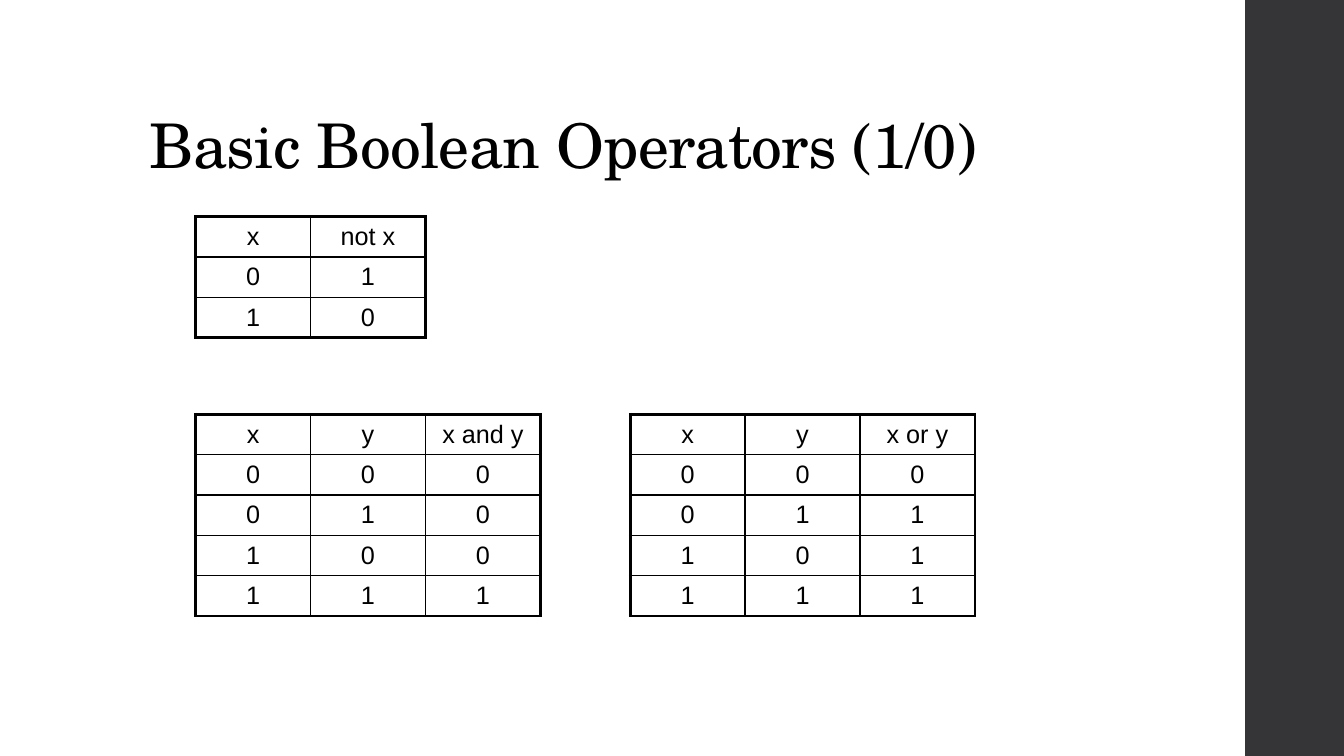
"""Build a slide of truth tables for the basic Boolean operators."""
from lxml import etree
from pptx import Presentation
from pptx.dml.color import RGBColor
from pptx.enum.shapes import MSO_SHAPE
from pptx.enum.text import MSO_ANCHOR, MSO_AUTO_SIZE, PP_ALIGN
from pptx.oxml.ns import qn
from pptx.util import Inches, Pt

RECTANGLE = MSO_SHAPE.RECTANGLE
MIDDLE, BOTTOM = MSO_ANCHOR.MIDDLE, MSO_ANCHOR.BOTTOM
LEFT, CENTER = PP_ALIGN.LEFT, PP_ALIGN.CENTER
NO_FIT = MSO_AUTO_SIZE.NONE

TITLE = "Basic Boolean Operators (1/0)"
NOT_TABLE = [("x", "not x"), (0, 1), (1, 0)]
AND_TABLE = [("x", "y", "x and y"), (0, 0, 0), (0, 1, 0), (1, 0, 0), (1, 1, 1)]
OR_TABLE = [("x", "y", "x or y"), (0, 0, 0), (0, 1, 1), (1, 0, 1), (1, 1, 1)]

WIDTH, HEIGHT = 13.33, 7.5
BAR_LEFT = 12.35
COLUMN, ROW = 1.14, 0.4
LEFT_EDGE, RIGHT_EDGE = 1.94, 6.25
UPPER_EDGE, LOWER_EDGE = 2.15, 4.11
TABLES = [
    (AND_TABLE, LEFT_EDGE, LOWER_EDGE),
    (OR_TABLE, RIGHT_EDGE, LOWER_EDGE),
    (NOT_TABLE, LEFT_EDGE, UPPER_EDGE),
]
BLACK, CHARCOAL = "000000", "353537"
THIN, THICK = 1, 2.25


def color(value):
    return RGBColor.from_string(value)


def format_text(para, font, size, alignment):
    para.alignment = alignment
    for span in para.runs:
        span.font.name = font
        span.font.size = Pt(size)
        span.font.color.rgb = color(BLACK)


def set_borders(cell, outer_sides):
    properties = cell._tc.get_or_add_tcPr()
    for position, (side, is_outer) in enumerate(outer_sides.items()):
        line = etree.Element(qn(f"a:ln{side}"), w=str(Pt(THICK if is_outer else THIN)))
        fill = etree.SubElement(line, qn("a:solidFill"))
        etree.SubElement(fill, qn("a:srgbClr"), val=BLACK)
        properties.insert(position, line)


def add_truth_table(page, rows, left, top):
    row_count, column_count = len(rows), len(rows[0])
    table = page.shapes.add_table(
        row_count, column_count, Inches(left), Inches(top),
        Inches(column_count * COLUMN), Inches(row_count * ROW)).table
    table.first_row = table.horz_banding = False
    for column in table.columns:
        column.width = Inches(COLUMN)
    for row_index, values in enumerate(rows):
        table.rows[row_index].height = Inches(ROW)
        for column_index, value in enumerate(values):
            cell = table.cell(row_index, column_index)
            cell.text = str(value)
            cell.vertical_anchor = MIDDLE
            cell.fill.background()
            format_text(cell.text_frame.paragraphs[0], "Arial", 18, CENTER)
            set_borders(cell, {
                "L": column_index == 0,
                "R": column_index == column_count - 1,
                "T": row_index == 0,
                "B": row_index == row_count - 1,
            })


def add_title(page):
    title = page.shapes.title
    title.left, title.top = Inches(1.38), Inches(0.4)
    title.width, title.height = Inches(10.6), Inches(1.45)
    frame = title.text_frame
    frame.text = TITLE
    frame.auto_size = NO_FIT
    frame.vertical_anchor = BOTTOM
    para = frame.paragraphs[0]
    para.line_spacing = 0.9
    format_text(para, "TeX Gyre Schola", 44, LEFT)
    para.runs[0].font._element.set("spc", "-50")


def add_side_bar(page):
    bar = page.shapes.add_shape(
        RECTANGLE, Inches(BAR_LEFT), 0, Inches(WIDTH - BAR_LEFT), Inches(HEIGHT))
    bar.shadow.inherit = False
    bar.fill.solid()
    bar.fill.fore_color.rgb = color(CHARCOAL)
    bar.line.fill.background()


def main():
    deck = Presentation()
    deck.slide_width, deck.slide_height = Inches(WIDTH), Inches(HEIGHT)
    page = deck.slides.add_slide(deck.slide_layouts.get_by_name("Title Only"))
    add_side_bar(page)
    add_title(page)
    for rows, left, top in TABLES:
        add_truth_table(page, rows, left, top)
    deck.save("out.pptx")


if __name__ == "__main__":
    main()
